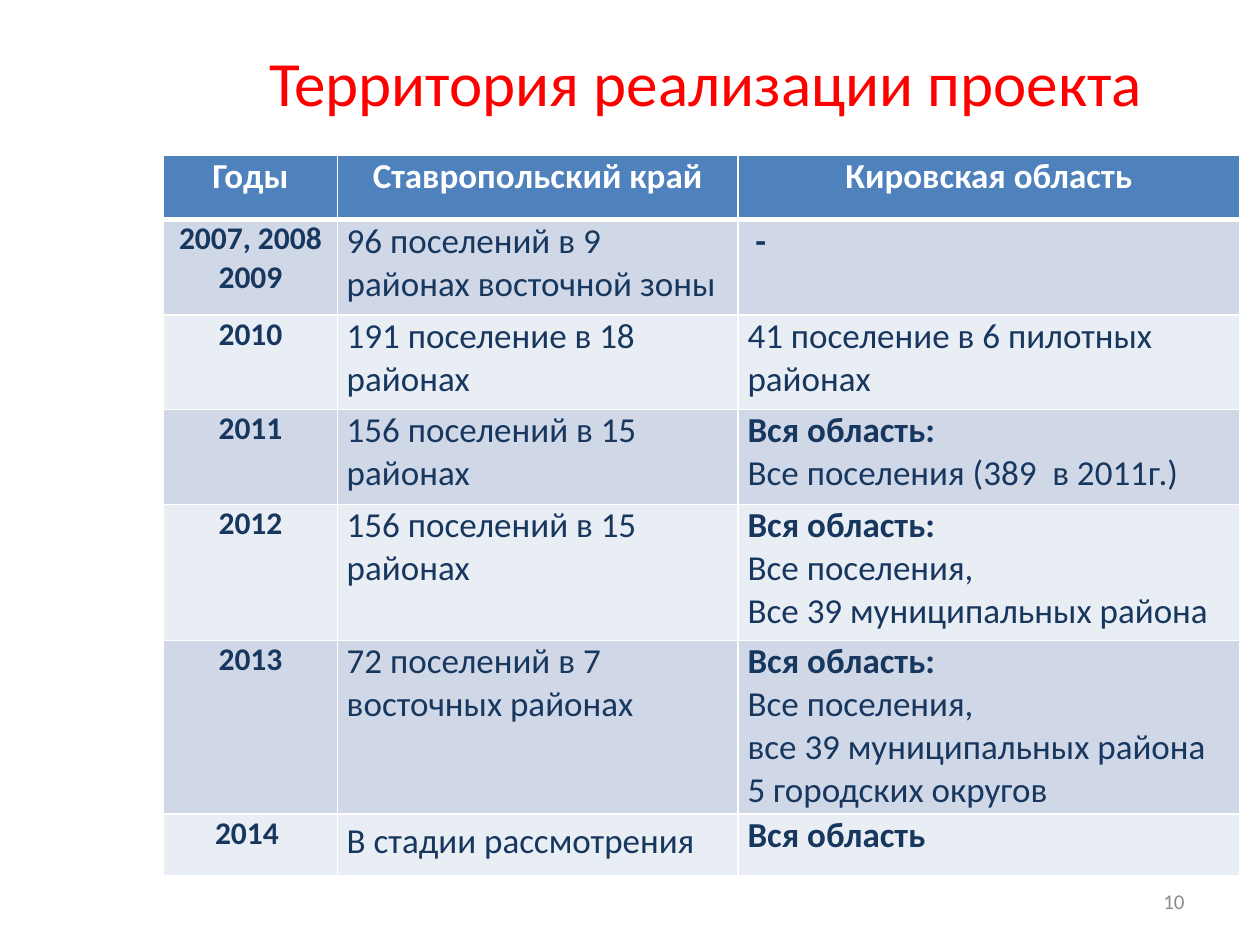
"""Build the slide on where the project is carried out."""
from lxml.etree import SubElement
from pptx import Presentation
from pptx.dml.color import RGBColor
from pptx.enum.text import MSO_ANCHOR as Anchor, PP_ALIGN as Align
from pptx.oxml.ns import qn
from pptx.util import Cm, Pt


def style(par, size, color, bold=False, align=Align.LEFT):
    par.alignment = align
    for run in par.runs:
        font = run.font
        font.name, font.size, font.bold = "Calibri", Pt(size), bold
        font.color.rgb = RGBColor.from_string(color)


def border(cell, side, width):
    line = SubElement(cell._tc.get_or_add_tcPr(), qn("a:ln" + side), w=str(Pt(width)))
    fill = SubElement(line, qn("a:solidFill"))
    SubElement(fill, qn("a:srgbClr"), val="FFFFFF")


rows = [
    ("Годы", "Ставропольский край", "Кировская область"),
    ("2007, 2008\n2009", "96 поселений в 9 районах восточной зоны", " -"),
    ("2010", "191 поселение в 18 районах", "41 поселение в 6 пилотных районах"),
    ("2011", "156 поселений в 15 районах", "Вся область:\nВсе поселения (389  в 2011г.)"),
    ("2012", "156 поселений в 15 районах",
     "Вся область:\nВсе поселения,\nВсе 39 муниципальных района"),
    ("2013", "72 поселений в 7 восточных районах",
     "Вся область:\nВсе поселения,\nвсе 39 муниципальных района\n5 городских округов"),
    ("2014 ", "В стадии рассмотрения", "Вся область"),
]
widths = [3.5, 8.08, 10.11]
heights = [1.3, 1.92, 1.9, 1.92, 2.74, 3.5, 1.25]

deck = Presentation()
deck.slide_width, deck.slide_height = Cm(25.4), Cm(19.05)
slide = deck.slides.add_slide(deck.slide_layouts[5])

title = slide.shapes.title
title.left, title.top, title.width, title.height = Cm(3.7), Cm(0.53), Cm(21.06), Cm(2.2)
title.text_frame.text = "Территория реализации проекта"
title.text_frame.vertical_anchor = Anchor.MIDDLE
style(title.text_frame.paragraphs[0], 36, "FF0000", align=Align.CENTER)

table = slide.shapes.add_table(
    len(rows), len(widths), Cm(3.3), Cm(3.13), Cm(sum(widths)), Cm(sum(heights))).table
for col, width in zip(table.columns, widths):
    col.width = Cm(width)
for r, (texts, height) in enumerate(zip(rows, heights)):
    table.rows[r].height = Cm(height)
    head = r == 0
    back = "4F81BD" if head else ("E9EDF4", "D0D8E8")[r % 2]
    for c, text in enumerate(texts):
        cell = table.cell(r, c)
        cell.margin_left = cell.margin_right = Cm(0.19)
        cell.margin_top = cell.margin_bottom = 0
        for side in "LRTB":
            thick = (r, side) in [(0, "B"), (1, "T")]
            border(cell, side, 3 if thick else 1)
        cell.fill.solid()
        cell.fill.fore_color.rgb = RGBColor.from_string(back)
        cell.text_frame.text = text
        for par in cell.text_frame.paragraphs:
            bold = head or c == 0 or par.text.startswith(("Вся", " -"))
            style(par, 18 if c == 0 and not head else 20, "FFFFFF" if head else "17375E",
                  bold, Align.CENTER if head or c == 0 else Align.LEFT)
table.cell(6, 1).text_frame.paragraphs[0].line_spacing = 1.15

frame = slide.shapes.add_textbox(Cm(18.2), Cm(17.66), Cm(5.93), Cm(1.01)).text_frame
frame.word_wrap = True
frame.vertical_anchor = Anchor.MIDDLE
frame.text = "10"
style(frame.paragraphs[0], 12, "8C8C8C", align=Align.RIGHT)

deck.save("out.pptx")
